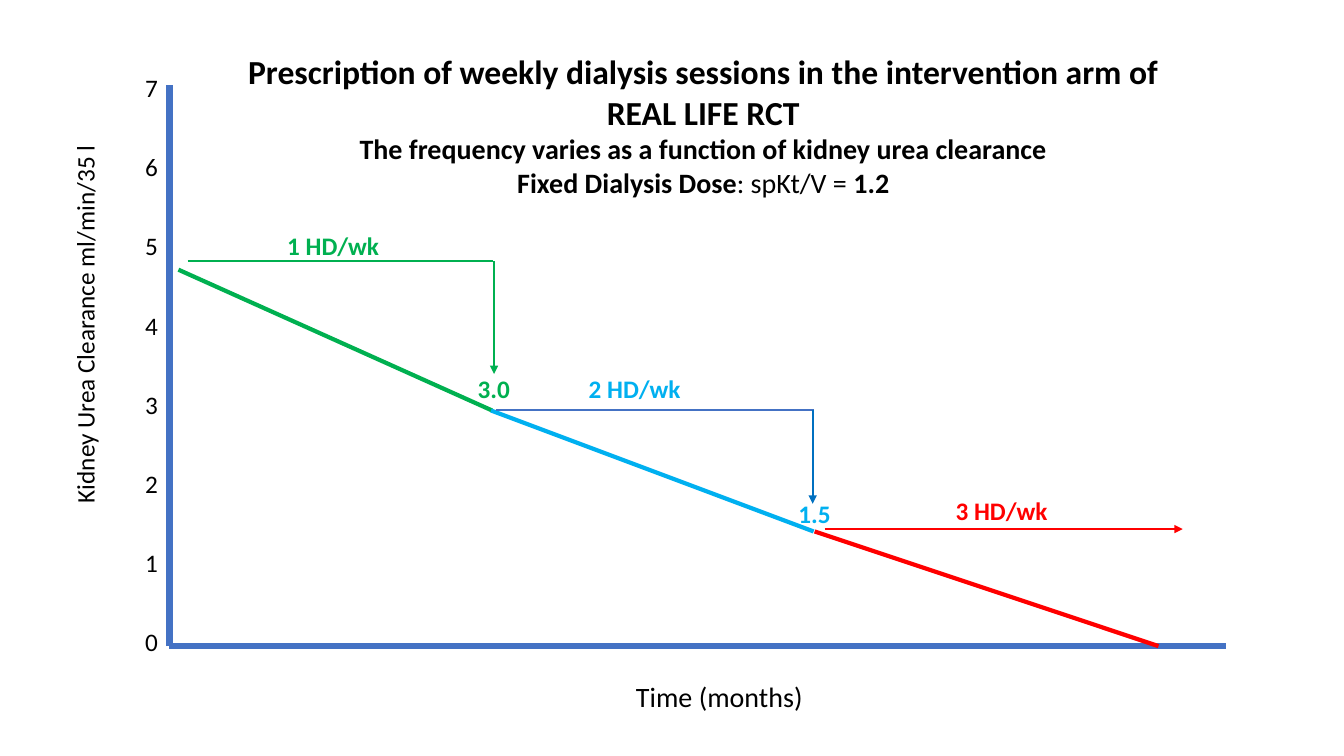
from dataclasses import dataclass

from lxml import etree
from pptx import Presentation
from pptx.dml.color import RGBColor
from pptx.enum.shapes import MSO_CONNECTOR
from pptx.enum.text import MSO_AUTO_SIZE, PP_ALIGN
from pptx.oxml.ns import qn
from pptx.util import Inches, Pt

STRAIGHT = MSO_CONNECTOR.STRAIGHT
CENTER = PP_ALIGN.CENTER
LEFT = PP_ALIGN.LEFT
GROW = MSO_AUTO_SIZE.SHAPE_TO_FIT_TEXT
CELL = Inches(0.1)  # one square of the slide grid


@dataclass(frozen=True)
class Theme:
    font: str = "Calibri"
    text: str = "000000"
    axis: str = "4472C4"
    once: str = "00B050"
    twice: str = "00B0F0"
    twice_drop: str = "0070C0"
    thrice: str = "FF0000"
    title_size: int = 24
    subtitle_size: int = 20
    label_size: int = 18
    axis_width: float = 4.5
    decline_width: float = 3
    step_width: float = 1.5
    thin_width: float = 1


@dataclass(frozen=True)
class Box:
    """A region of the slide, in grid cells."""
    left: float
    top: float
    width: float
    height: float

    def emu(self):
        return [round(value * CELL)
                for value in (self.left, self.top, self.width, self.height)]


THEME = Theme()
LABEL_HEIGHT = 4
TOP_CLEARANCE = 7.1

TITLE_BOX = Box(20.7, 4.6, 98.1, 15.8)
PLOT_BOX = Box(16.8, 8.4, 104.8, 55.7)
TIME_BOX = Box(62.1, 66.9, 19.3, 4.4)
CLEARANCE_BOX = Box(-10.9, 29.6, 38.6, LABEL_HEIGHT)

# Points are (columns right of the clearance axis, clearance).
DECLINE = [
    ((0.9, 4.76), (32, 2.98), THEME.once),
    ((31.9, 2.98), (63.9, 1.45), THEME.twice),
    ((64, 1.45), (98.1, 0), THEME.thrice),
]
STEPS = [
    ((1.8, 4.87), (32.1, 4.87), THEME.once, THEME.thin_width, False),
    ((32.2, 4.87), (32.2, 3.44), THEME.once, THEME.step_width, True),
    ((32.4, 2.99), (63.9, 2.99), THEME.axis, THEME.step_width, False),
    ((63.8, 2.99), (63.8, 1.8), THEME.twice_drop, THEME.step_width, True),
    ((65, 1.48), (100.5, 1.48), THEME.thrice, THEME.thin_width, True),
]
# Text, left column, clearance at the middle, width, colour.
STEP_LABELS = [
    ("1 HD/wk", 10.7, 5.06, 11.2, THEME.once),
    ("3.0", 29.6, 3.26, 5.3, THEME.once),
    ("2 HD/wk", 40.6, 3.26, 11.2, THEME.twice),
    ("1.5", 61.4, 1.68, 5.3, THEME.twice),
    ("3 HD/wk", 77, 1.72, 11.2, THEME.thrice),
]
# Each paragraph: size, then runs of (text, bold).
TITLE = [
    (THEME.title_size, [("Prescription of weekly dialysis sessions in the "
                         "intervention arm of REAL LIFE RCT", True)]),
    (THEME.subtitle_size, [("The frequency varies as a function of kidney "
                            "urea clearance", True)]),
    (THEME.subtitle_size, [("Fixed Dialysis Dose", True),
                           (": spKt/V = ", False), ("1.2", True)]),
]


def add_text(slide, box, paragraphs, color=THEME.text, align=LEFT, wrap=False):
    shape = slide.shapes.add_textbox(*box.emu())
    frame = shape.text_frame
    frame.word_wrap = wrap
    frame.auto_size = GROW
    for index, (size, runs) in enumerate(paragraphs):
        paragraph = frame.add_paragraph() if index else frame.paragraphs[0]
        paragraph.alignment = align
        paragraph.font.name = THEME.font
        paragraph.font.size = Pt(size)
        paragraph.font.color.rgb = RGBColor.from_string(color)
        for text, bold in runs:
            run = paragraph.add_run()
            run.text = text
            run.font.bold = bold
    return shape


def add_line(slide, start, end, color, width, arrow=False):
    """Draw a line between two points given in grid cells."""
    ends = [round(value * CELL) for value in (*start, *end)]
    connector = slide.shapes.add_connector(STRAIGHT, *ends)
    connector.line.color.rgb = RGBColor.from_string(color)
    connector.line.width = Pt(width)
    if arrow:
        line = connector.line._get_or_add_ln()
        etree.SubElement(line, qn("a:tailEnd"), type="triangle")
    etree.SubElement(connector._element.spPr, qn("a:effectLst"))


def add_plot(slide, box):
    bottom = box.top + box.height
    unit = box.height / TOP_CLEARANCE

    def point(column, clearance):
        return box.left + column, bottom - clearance * unit

    def add_label(text, column, clearance, width, color, bold):
        left, middle = point(column, clearance)
        place = Box(left, middle - LABEL_HEIGHT / 2, width, LABEL_HEIGHT)
        add_text(slide, place, [(THEME.label_size, [(text, bold)])], color)

    for end in ((0, TOP_CLEARANCE), (box.width, 0)):
        add_line(slide, point(0, 0), point(*end), THEME.axis, THEME.axis_width)
    for tick in range(8):
        add_label(str(tick), -3.4, tick + 0.06, 3.3, THEME.text, False)
    for start, end, color in DECLINE:
        add_line(slide, point(*start), point(*end), color, THEME.decline_width)
    for start, end, color, width, arrow in STEPS:
        add_line(slide, point(*start), point(*end), color, width, arrow)
    for label in STEP_LABELS:
        add_label(*label, bold=True)


def add_axis_titles(slide, time_box, clearance_box):
    add_text(slide, time_box,
             [(THEME.subtitle_size, [("Time (months)", False)])])
    clearance = add_text(
        slide, clearance_box,
        [(THEME.label_size, [("Kidney Urea Clearance ml/min/35 l", False)])],
        wrap=True)
    clearance.rotation = 270


def main():
    presentation = Presentation()
    presentation.slide_width = Inches(13.33)
    presentation.slide_height = Inches(7.5)
    slide = presentation.slides.add_slide(presentation.slide_layouts[6])
    add_plot(slide, PLOT_BOX)
    add_axis_titles(slide, TIME_BOX, CLEARANCE_BOX)
    add_text(slide, TITLE_BOX, TITLE, align=CENTER, wrap=True)
    presentation.save("out.pptx")


if __name__ == "__main__":
    main()
